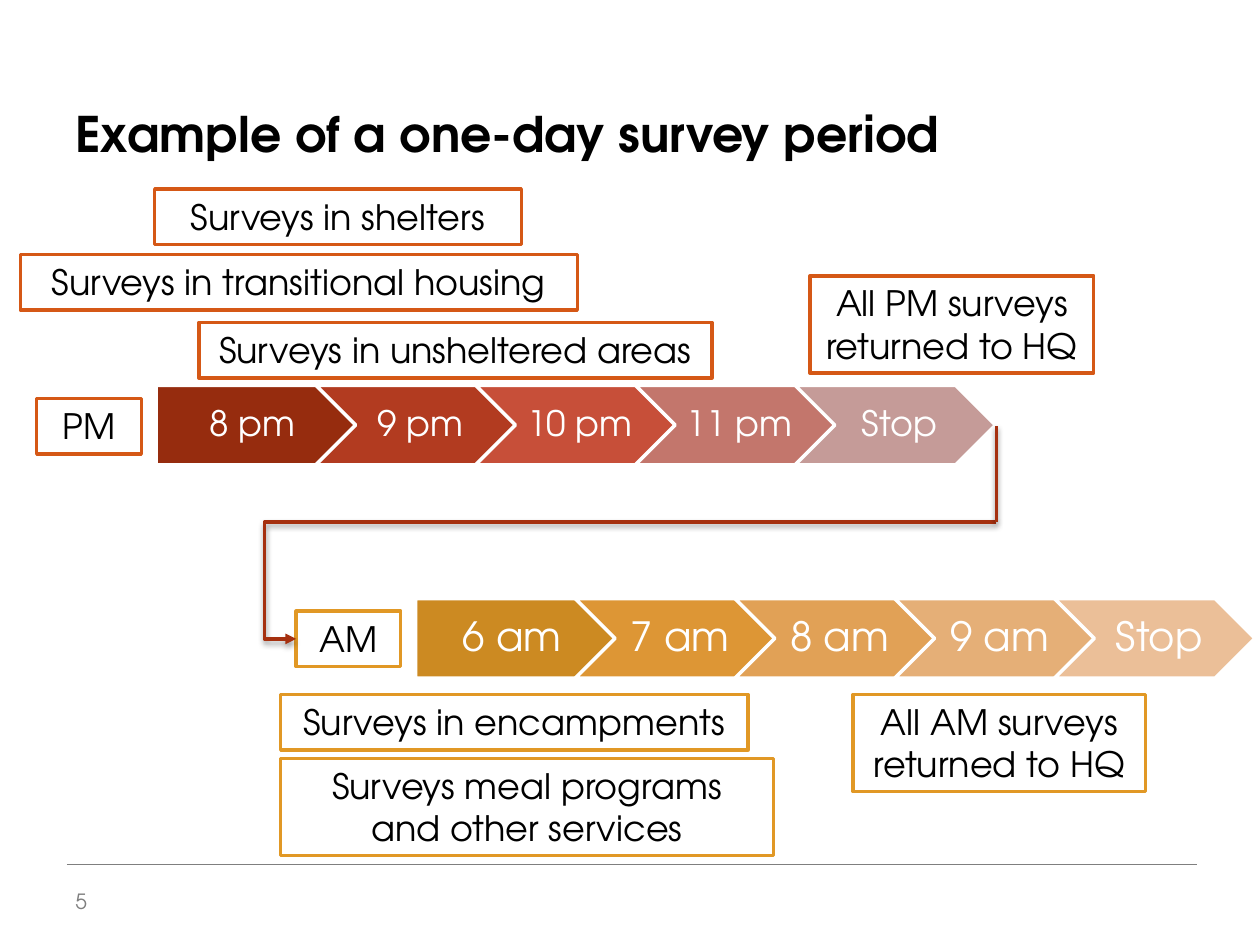
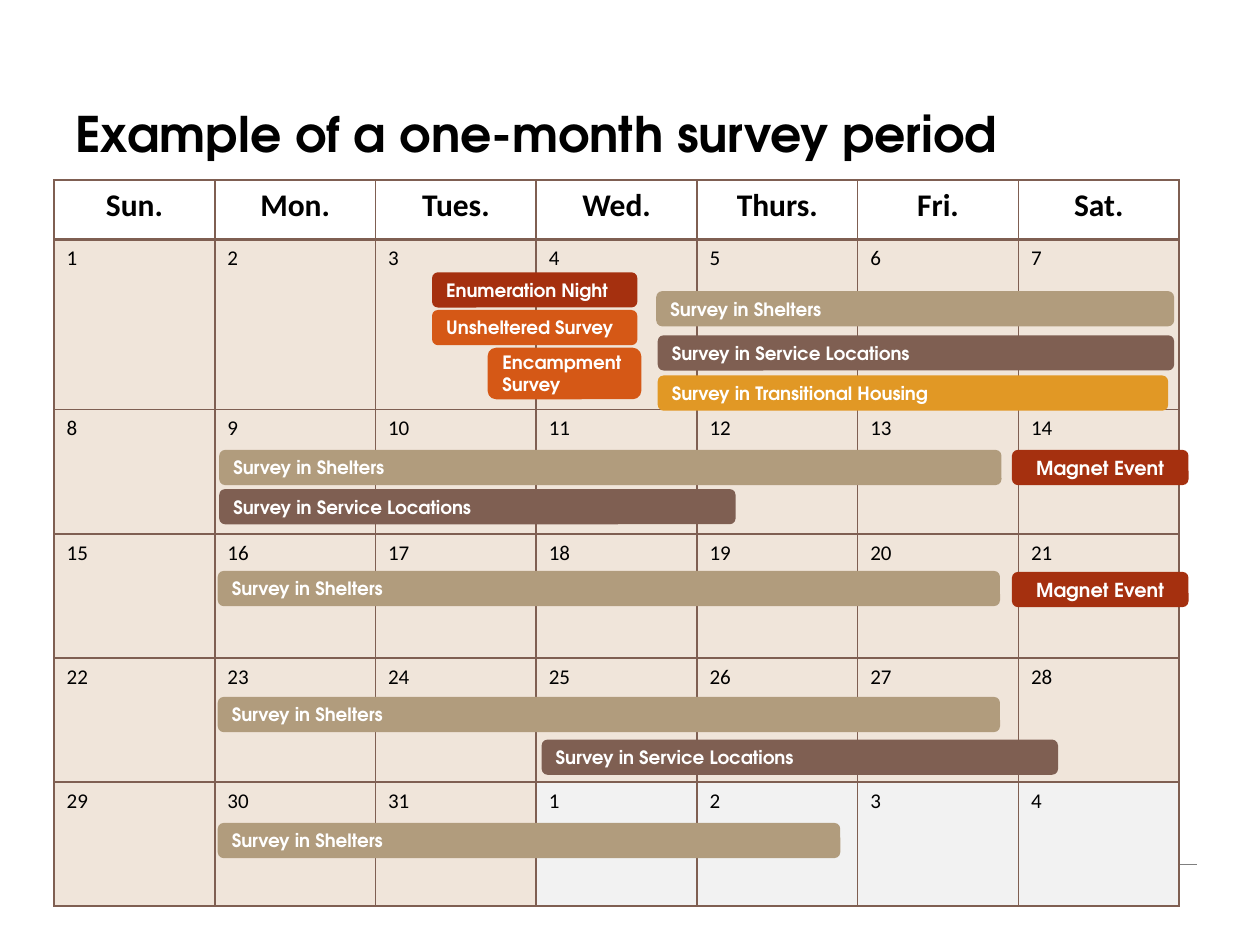
import pptx
import pptx.dml.color
import pptx.enum.shapes
import pptx.enum.text
import pptx.oxml
import pptx.oxml.ns
import pptx.util
from lxml import etree

Cm = pptx.util.Cm
Pt = pptx.util.Pt
SHAPE = pptx.enum.shapes.MSO_SHAPE
CONNECTOR = pptx.enum.shapes.MSO_CONNECTOR
ALIGN = pptx.enum.text.PP_ALIGN
ANCHOR = pptx.enum.text.MSO_ANCHOR
qn = pptx.oxml.ns.qn

FONT = "TeX Gyre Adventor"
TABLE_FONT = "Calibri"
BLACK, WHITE, GREY = "000000", "FFFFFF", "7F7F7F"
RUST, ORANGE, GOLD = "A5300F", "D55816", "E19825"
TAN, BROWN = "B19C7D", "7F5F52"
MONTH_FILL, NEXT_MONTH_FILL = "F0E5DA", "F2F2F2"

DAY_TITLE = "Example of a one-day survey period"
MONTH_TITLE = "Example of a one-month survey period"

TIMELINES = [
    {"left": 3.15, "top": 7.77, "size": 20, "margins": (0.3, 0.23, 0.15),
     "steps": [("8 pm", "962C0E"), ("9 pm", "B23B20"), ("10 pm", "C74F39"),
               ("11 pm", "C3766C"), ("Stop", "C59B98")]},
    {"left": 8.38, "top": 12.07, "size": 23, "margins": (0.33, 0.25, 0.18),
     "steps": [("6 am", "CC8A22"), ("7 am", "DD9635"), ("8 am", "E1A156"),
               ("9 am", "E5AF77"), ("Stop", "EBBF98")]},
]
STEP_WIDTH, STEP_HEIGHT, STEP_PITCH = 4.04, 1.6, 3.22

ONE_LINE, TWO_LINES = 1.12, 1.96
LABELS = [
    ("Surveys in unsheltered areas", ORANGE, 4.01, 6.5, 10.34, ONE_LINE),
    ("All PM surveys returned to HQ", ORANGE, 16.33, 5.56, 5.72, TWO_LINES),
    ("Surveys meal programs and other services", GOLD, 5.66, 15.29, 9.93, TWO_LINES),
    ("All AM surveys returned to HQ", GOLD, 17.2, 14, 5.89, TWO_LINES),
    ("Surveys in shelters", ORANGE, 3.12, 3.81, 7.39, ONE_LINE),
    ("Surveys in transitional housing", ORANGE, 0.41, 5.13, 11.23, ONE_LINE),
    ("Surveys in encampments", GOLD, 5.66, 14, 9.42, ONE_LINE),
    ("PM", ORANGE, 0.74, 8.03, 2.11, ONE_LINE),
    ("AM", GOLD, 5.97, 12.32, 2.11, ONE_LINE),
]

WEEKDAYS = ["Sun.", "Mon.", "Tues.", "Wed.", "Thurs.", "Fri.", "Sat."]
DAYS_IN_MONTH = 31
COLUMN_WIDTH = 3.24
ROW_HEIGHTS = [1.19, 3.44, 2.5, 2.5, 2.5, 2.5]

BAR_HEIGHT, TALL_BAR_HEIGHT = 0.71, 1.04
ACTIVITIES = [
    ("Enumeration Night", RUST, [(8.71, 5.49, 4.14)]),
    ("Unsheltered Survey", ORANGE, [(8.71, 6.25, 4.14)]),
    ("Encampment Survey", ORANGE, [(9.83, 7.01, 3.1)]),
    ("Survey in Shelters", TAN, [
        (13.23, 5.87, 10.44), (4.42, 9.07, 15.77), (4.39, 11.51, 15.77),
        (4.39, 14.05, 15.77), (4.39, 16.59, 12.55)]),
    ("Survey in Service Locations", BROWN, [
        (13.26, 6.76, 10.41), (4.42, 9.86, 10.41), (10.92, 14.91, 10.41)]),
    ("Survey in Transitional Housing", GOLD, [(13.26, 7.57, 10.29)]),
    ("Magnet Event", RUST, [(20.4, 9.07, 3.56), (20.4, 11.53, 3.56)]),
]


def color(value):
    return pptx.dml.color.RGBColor.from_string(value)


def set_text(frame, text, size, text_color, bold=False, align=ALIGN.LEFT,
             anchor=ANCHOR.TOP, font_name=FONT):
    frame.text = text
    frame.word_wrap = True
    frame.vertical_anchor = anchor
    style_paragraph(frame.paragraphs[0], size, text_color, bold, align, font_name)


def style_paragraph(paragraph, size, text_color, bold, align, font_name):
    paragraph.alignment = align
    paragraph.font.name = font_name
    paragraph.font.size = Pt(size)
    paragraph.font.bold = bold
    paragraph.font.color.rgb = color(text_color)


def add_box(slide, kind, box, fill, line=None):
    shape = slide.shapes.add_shape(kind, *map(Cm, box))
    shape.shadow.inherit = False
    shape.fill.solid()
    shape.fill.fore_color.rgb = color(fill)
    if line:
        shape.line.color.rgb = color(line)
        shape.line.width = Pt(2)
    else:
        shape.line.fill.background()
    return shape


def add_line(slide, kind, points, line_color, width):
    connector = slide.shapes.add_connector(kind, *map(Cm, points))
    connector.line.color.rgb = color(line_color)
    connector.line.width = Pt(width)
    effects = etree.SubElement(connector._element.spPr, qn("a:effectLst"))
    return connector, effects


def add_soft_shadow(effects):
    shadow = etree.SubElement(effects, qn("a:outerShdw"), blurRad="40000",
                              dist="20000", dir="5400000", rotWithShape="0")
    shade = etree.SubElement(shadow, qn("a:srgbClr"), val=BLACK)
    etree.SubElement(shade, qn("a:alpha"), val="38000")


def add_titled_slide(presentation, title_text, number=None):
    slide = presentation.slides.add_slide(presentation.slide_layouts[5])
    title = slide.shapes.title
    title.left, title.top, title.width, title.height = map(Cm, (1.27, 1.96, 22.86, 2.54))
    set_text(title.text_frame, title_text, 28, BLACK, bold=True)
    title.text_frame.auto_size = pptx.enum.text.MSO_AUTO_SIZE.NONE
    add_line(slide, CONNECTOR.STRAIGHT, (1.35, 17.42, 24.13, 17.42), GREY, 0.25)
    if number:
        box = slide.shapes.add_textbox(*map(Cm, (1.27, 17.65, 2.72, 1.02)))
        set_text(box.text_frame, number, 12, GREY, anchor=ANCHOR.MIDDLE)
    return slide


def add_timeline(slide, timeline):
    first_margin, later_margin, vertical_margin = timeline["margins"]
    for index, (text, fill) in enumerate(timeline["steps"]):
        left = timeline["left"] + index * STEP_PITCH
        kind = SHAPE.CHEVRON if index else SHAPE.PENTAGON
        step = add_box(slide, kind, (left, timeline["top"], STEP_WIDTH, STEP_HEIGHT),
                       fill, WHITE)
        frame = step.text_frame
        set_text(frame, text, timeline["size"], WHITE, align=ALIGN.CENTER,
                 anchor=ANCHOR.MIDDLE)
        frame.paragraphs[0].line_spacing = 0.9
        frame.margin_left = Cm(later_margin if index else first_margin)
        frame.margin_right = Cm(0.07)
        frame.margin_top = frame.margin_bottom = Cm(vertical_margin)


def add_return_arrow(slide):
    elbow, effects = add_line(slide, CONNECTOR.ELBOW, (20.09, 10.52, 5.97, 12.88), RUST, 2)
    add_soft_shadow(effects)
    geometry = elbow._element.spPr.find(qn("a:prstGeom"))
    guides = geometry.find(qn("a:avLst"))
    if guides is None:
        guides = etree.SubElement(geometry, qn("a:avLst"))
    etree.SubElement(guides, qn("a:gd"), name="adj1", fmla="val 104500")
    etree.SubElement(elbow.line._get_or_add_ln(), qn("a:tailEnd"), type="triangle")
    _, effects = add_line(slide, CONNECTOR.STRAIGHT, (20.09, 10.52, 20.09, 8.59), RUST, 2)
    add_soft_shadow(effects)


def set_borders(cell, widths):
    properties = cell._tc.get_or_add_tcPr()
    for side, width in widths.items():
        line = etree.SubElement(properties, qn("a:ln" + side), w=str(Pt(width)))
        fill = etree.SubElement(line, qn("a:solidFill"))
        etree.SubElement(fill, qn("a:srgbClr"), val=BROWN)


def add_calendar(slide):
    frame = slide.shapes.add_table(
        len(ROW_HEIGHTS), len(WEEKDAYS), Cm(1.09), Cm(3.63),
        Cm(COLUMN_WIDTH * len(WEEKDAYS)), Cm(sum(ROW_HEIGHTS)))
    table = frame.table
    table.first_row = table.horz_banding = False
    for column in table.columns:
        column.width = Cm(COLUMN_WIDTH)
    for row_index, height in enumerate(ROW_HEIGHTS):
        table.rows[row_index].height = Cm(height)
        for column_index, weekday in enumerate(WEEKDAYS):
            cell = table.cell(row_index, column_index)
            is_header = row_index == 0
            day = (row_index - 1) * len(WEEKDAYS) + column_index + 1
            set_borders(cell, {"L": 1, "R": 1, "T": 2 if row_index == 1 else 1,
                               "B": 2 if is_header else 1})
            cell.fill.solid()
            if is_header:
                text, fill, size, align = weekday, WHITE, 18, ALIGN.CENTER
            else:
                text = str((day - 1) % DAYS_IN_MONTH + 1)
                fill = MONTH_FILL if day <= DAYS_IN_MONTH else NEXT_MONTH_FILL
                size, align = 12, ALIGN.LEFT
            cell.fill.fore_color.rgb = color(fill)
            cell.text = text
            style_paragraph(cell.text_frame.paragraphs[0], size, BLACK, is_header,
                            align, TABLE_FONT)


def add_activity_bars(slide):
    for text, fill, bars in ACTIVITIES:
        is_event = text == "Magnet Event"
        height = TALL_BAR_HEIGHT if text == "Encampment Survey" else BAR_HEIGHT
        for bar_position in bars:
            bar = add_box(slide, SHAPE.ROUNDED_RECTANGLE, (*bar_position, height), fill)
            set_text(bar.text_frame, text, 11 if is_event else 10.5, WHITE, bold=True,
                     align=ALIGN.CENTER if is_event else ALIGN.LEFT, anchor=ANCHOR.MIDDLE)


def build_day_slide(presentation):
    slide = add_titled_slide(presentation, DAY_TITLE, "5")
    for timeline in TIMELINES:
        add_timeline(slide, timeline)
    for text, line, *box in LABELS:
        label = add_box(slide, SHAPE.RECTANGLE, box, WHITE, line)
        set_text(label.text_frame, text, 20, BLACK, align=ALIGN.CENTER)
    add_return_arrow(slide)


def build_month_slide(presentation):
    slide = add_titled_slide(presentation, MONTH_TITLE)
    add_calendar(slide)
    add_activity_bars(slide)


def main():
    presentation = pptx.Presentation()
    presentation.slide_width, presentation.slide_height = Cm(25.4), Cm(19.05)
    build_day_slide(presentation)
    build_month_slide(presentation)
    presentation.save("out.pptx")


if __name__ == "__main__":
    main()
